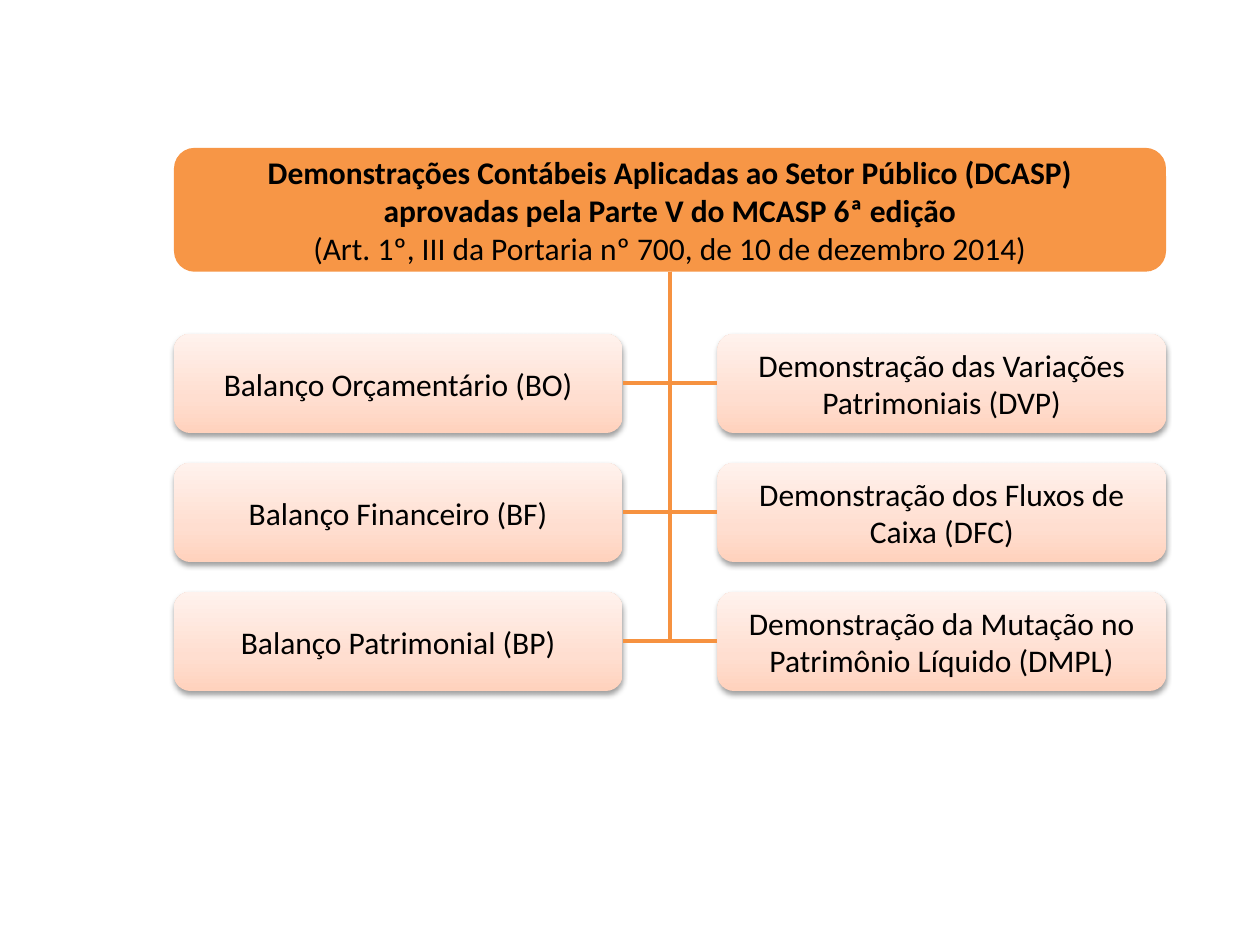
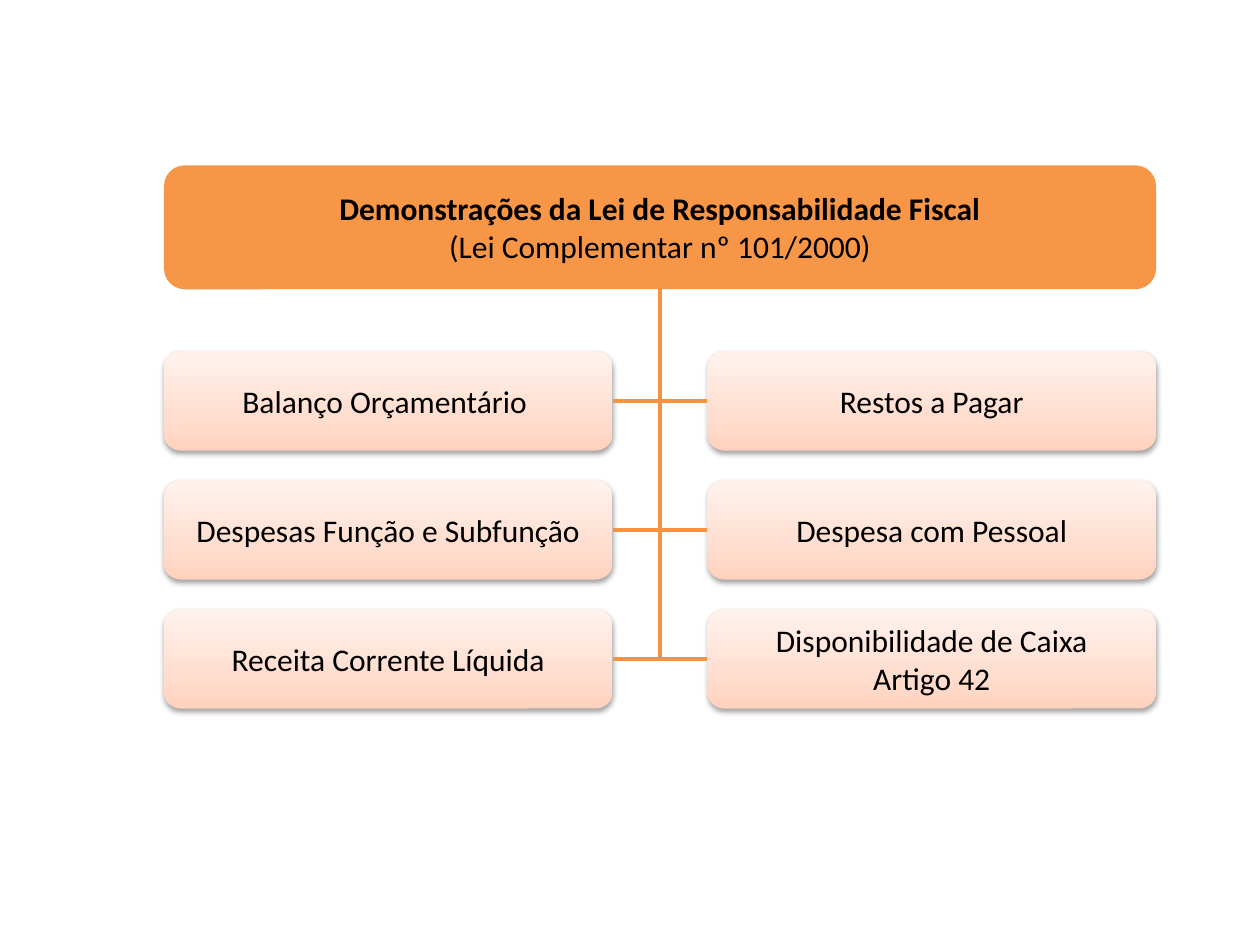
from copy import deepcopy

from lxml.etree import SubElement
from pptx import Presentation
from pptx.dml.color import RGBColor
from pptx.enum.shapes import MSO_CONNECTOR, MSO_SHAPE
from pptx.enum.text import MSO_ANCHOR, PP_ALIGN
from pptx.oxml.ns import qn
from pptx.util import Pt

COLORS = {
    "header": "F79646",
    "branch": "F69240",
    "card_bottom": "FFD2BD",
    "card_middle": "FFDED0",
    "card_top": "FFF2ED",
    "text": "000000",
    "shadow": "000000",
}
FONT = "Calibri"
HEADER_WIDTH, HEADER_HEIGHT = 566.9, 70.8
CARD_WIDTH, CARD_HEIGHT = 256.3, 56.7
FIRST_ROW_OFFSET, ROW_PITCH = 106.3, 73.7
LEFT_SIDE, BOTTOM_SIDE, RIGHT_SIDE = 1, 2, 3

DCASP = {
    "origin": (99.4, 84.5),
    "bold_lines": [
        "Demonstrações Contábeis Aplicadas ao Setor Público (DCASP)",
        "aprovadas pela Parte V do MCASP 6ª edição",
    ],
    "legal_basis": "(Art. 1º, III da Portaria nº 700, de 10 de dezembro 2014)",
    "columns": [
        [
            ["Balanço Orçamentário (BO)"],
            ["Balanço Financeiro (BF)"],
            ["Balanço Patrimonial (BP)"],
        ],
        [
            ["Demonstração das Variações Patrimoniais (DVP)"],
            ["Demonstração dos Fluxos de Caixa (DFC)"],
            ["Demonstração da Mutação no Patrimônio Líquido (DMPL)"],
        ],
    ],
}
FISCAL_LAW = {
    "origin": (93.7, 94.5),
    "bold_lines": ["Demonstrações da Lei de Responsabilidade Fiscal"],
    "legal_basis": "(Lei Complementar nº 101/2000)",
    "columns": [
        [
            ["Balanço Orçamentário "],
            ["Despesas Função e Subfunção"],
            ["Receita Corrente Líquida"],
        ],
        [
            ["Restos a Pagar"],
            ["Despesa com Pessoal"],
            ["Disponibilidade de Caixa", "Artigo 42"],
        ],
    ],
}


def rgb(name):
    return RGBColor.from_string(COLORS[name])


def add_rounded_box(slide, left, top, width, height, lines, bold_count=0):
    """Add an unfilled rounded box whose first bold_count lines are bold."""
    box = slide.shapes.add_shape(
        MSO_SHAPE.ROUNDED_RECTANGLE, Pt(left), Pt(top), Pt(width), Pt(height)
    )
    box.shadow.inherit = False
    box.line.fill.background()
    frame = box.text_frame
    frame.word_wrap = True
    frame.vertical_anchor = MSO_ANCHOR.MIDDLE
    for index, line in enumerate(lines):
        paragraph = frame.add_paragraph() if index else frame.paragraphs[0]
        paragraph.text = line
        paragraph.alignment = PP_ALIGN.CENTER
        paragraph.font.name = FONT
        paragraph.font.size = Pt(18)
        paragraph.font.bold = index < bold_count
        paragraph.font.color.rgb = rgb("text")
    return box


def add_header(slide, left, top, bold_lines, legal_basis):
    header = add_rounded_box(
        slide, left, top, HEADER_WIDTH, HEADER_HEIGHT,
        bold_lines + [legal_basis], len(bold_lines),
    )
    header.fill.solid()
    header.fill.fore_color.rgb = rgb("header")
    return header


def add_card(slide, left, top, lines):
    card = add_rounded_box(slide, left, top, CARD_WIDTH, CARD_HEIGHT, lines)
    fill_card_gradient(card)
    add_soft_shadow(card)
    return card


def fill_card_gradient(card):
    card.fill.gradient()
    card.fill.gradient_angle = 90
    stop_list = card._element.spPr.find(qn("a:gradFill")).find(qn("a:gsLst"))
    stop_list.append(deepcopy(stop_list[0]))
    levels = [(0, "card_bottom"), (0.35, "card_middle"), (1, "card_top")]
    for stop, (position, color) in zip(card.fill.gradient_stops, levels):
        stop.position = position
        stop.color.rgb = rgb(color)


def add_soft_shadow(card):
    effects = card._element.spPr.find(qn("a:effectLst"))
    shadow = SubElement(
        effects, qn("a:outerShdw"), blurRad=str(Pt(3.1)), dist=str(Pt(1.6)),
        dir="5400000", rotWithShape="0",
    )
    color = SubElement(shadow, qn("a:srgbClr"), val=COLORS["shadow"])
    SubElement(color, qn("a:alpha"), val="38000")


def add_branch(slide, header, card):
    """Join header to card with one bend: straight down, then sideways."""
    start_x = header.left + header.width // 2
    start_y = header.top + header.height
    goes_left = card.left < start_x
    end_x = card.left + card.width if goes_left else card.left
    end_y = card.top + card.height // 2
    branch = slide.shapes.add_connector(
        MSO_CONNECTOR.ELBOW, start_x, start_y, end_x, end_y
    )
    branch.begin_connect(header, BOTTOM_SIDE)
    branch.end_connect(card, RIGHT_SIDE if goes_left else LEFT_SIDE)
    branch.line.color.rgb = rgb("branch")
    branch.line.width = Pt(2.25)

    # The one-bend preset runs sideways first, so its frame is turned a quarter.
    drop, reach = end_y - start_y, abs(end_x - start_x)
    branch.left = (start_x + end_x - drop) // 2
    branch.top = (start_y + end_y - reach) // 2
    branch.width, branch.height = drop, reach
    properties = branch._element.spPr
    properties.find(qn("a:prstGeom")).set("prst", "bentConnector2")
    frame = properties.find(qn("a:xfrm"))
    frame.attrib.clear()
    frame.set("rot", "5400000" if goes_left else "16200000")
    if not goes_left:
        frame.set("flipH", "1")
    SubElement(properties, qn("a:effectLst"))


def add_statement_chart(presentation, chart):
    slide = presentation.slides.add_slide(presentation.slide_layouts[6])
    left, top = chart["origin"]
    column_pitch = HEADER_WIDTH - CARD_WIDTH
    cards = [
        add_card(
            slide, left + column * column_pitch,
            top + FIRST_ROW_OFFSET + row * ROW_PITCH, lines,
        )
        for column, statements in enumerate(chart["columns"])
        for row, lines in enumerate(statements)
    ]
    header = add_header(
        slide, left, top, chart["bold_lines"], chart["legal_basis"]
    )
    for card in cards:
        add_branch(slide, header, card)


def main():
    presentation = Presentation()
    presentation.slide_width = Pt(720)
    presentation.slide_height = Pt(540)
    for chart in (DCASP, FISCAL_LAW):
        add_statement_chart(presentation, chart)
    presentation.save("out.pptx")


if __name__ == "__main__":
    main()
